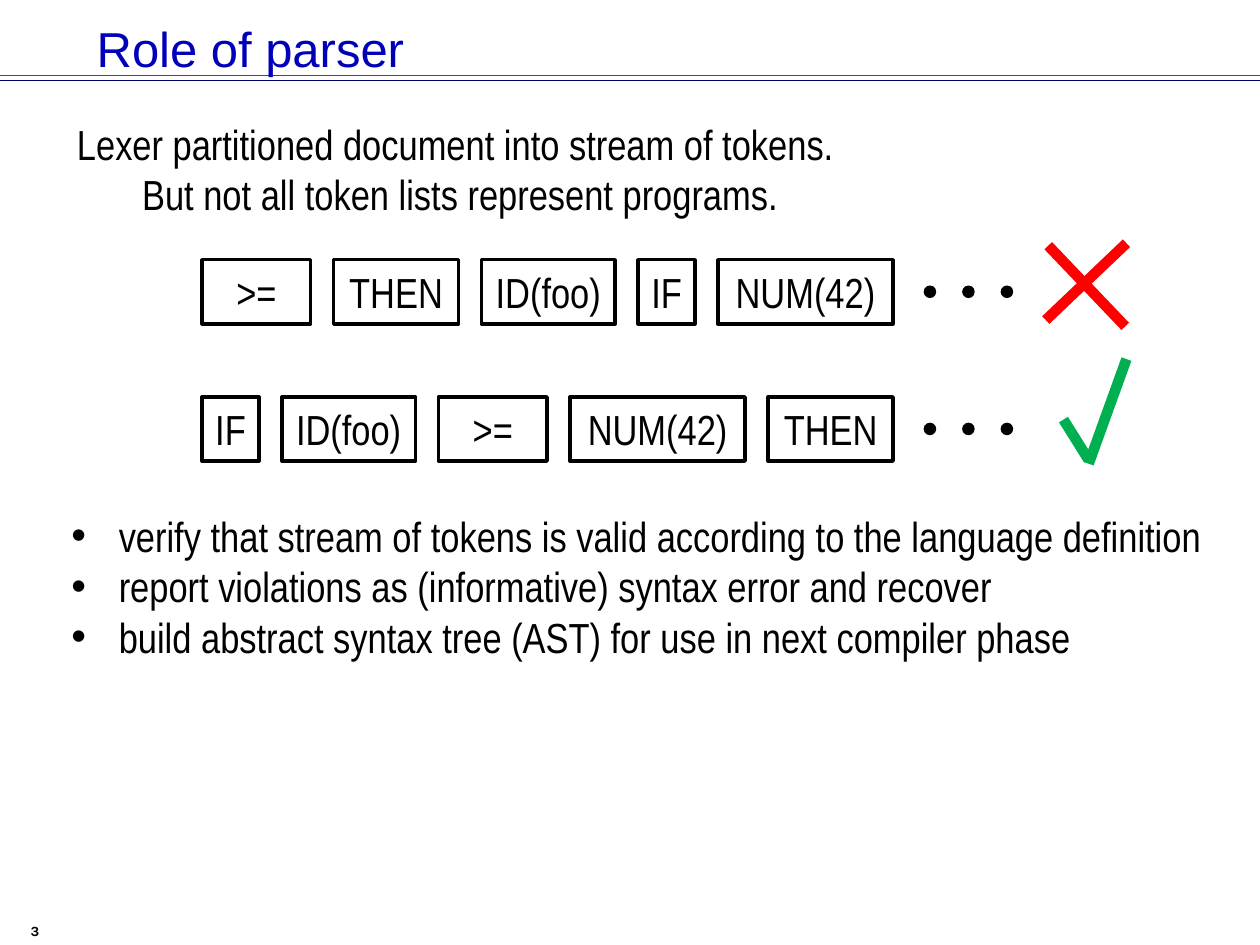
from lxml.etree import SubElement
from pptx import Presentation
from pptx.dml.color import RGBColor
from pptx.enum.shapes import MSO_CONNECTOR as Connector, MSO_SHAPE as Shape
from pptx.enum.text import MSO_ANCHOR as Anchor, PP_ALIGN as Align
from pptx.oxml.ns import qn
from pptx.util import Pt

BLACK = RGBColor(0x00, 0x00, 0x00)
RED = RGBColor(0xFF, 0x00, 0x00)
GREEN = RGBColor(0x00, 0xB0, 0x50)
NAVY = RGBColor(0x00, 0x00, 0x66)
TITLE_BLUE = RGBColor(0x00, 0x00, 0xBA)

BODY_FONT = "Arial Narrow"
BODY_SIZE = 24
ROW_LEFT = 115.5
TOKEN_GAP = 13.2
TOKEN_HEIGHT = 36.7
TOKEN_WIDTHS = {">=": 62, "THEN": 71.3, "ID(foo)": 76.3, "IF": 32.4, "NUM(42)": 100}
DOT_LEFT = 527.8
DOT_STEP = 22
DOT_SIZE = 7.2

TOKEN_ROWS = [
    (148.4, [">=", "THEN", "ID(foo)", "IF", "NUM(42)"]),
    (226.8, ["IF", "ID(foo)", ">=", "NUM(42)", "THEN"]),
]
PARSER_TASKS = [
    "verify that stream of tokens is valid according to the language definition",
    "report violations as (informative) syntax error and recover",
    "build abstract syntax tree (AST) for use in next compiler phase",
]


def add_span(para, text, size=BODY_SIZE, font=BODY_FONT, color=BLACK, bold=False):
    span = para.add_run()
    span.text = text
    span.font.size = Pt(size)
    span.font.name = font
    span.font.color.rgb = color
    span.font.bold = bold


def add_text_box(page, left, top, width, height, wrap=True):
    box = page.shapes.add_textbox(Pt(left), Pt(top), Pt(width), Pt(height))
    box.text_frame.word_wrap = wrap
    return box.text_frame


def add_stroke(page, start, end, color, width):
    points = [Pt(value) for value in (*start, *end)]
    stroke = page.shapes.add_connector(Connector.STRAIGHT, *points)
    stroke.line.color.rgb = color
    stroke.line.width = Pt(width)
    SubElement(stroke._element.spPr, qn("a:effectLst"))


def add_plain_shape(page, kind, left, top, width, height):
    shape = page.shapes.add_shape(kind, Pt(left), Pt(top), Pt(width), Pt(height))
    shape.shadow.inherit = False
    return shape


def add_token(page, text, left, top):
    token = add_plain_shape(page, Shape.RECTANGLE, left, top, TOKEN_WIDTHS[text], TOKEN_HEIGHT)
    token.fill.background()
    token.line.color.rgb = BLACK
    token.line.width = Pt(2)
    token.text_frame.word_wrap = False
    token.text_frame.vertical_anchor = Anchor.MIDDLE
    para = token.text_frame.paragraphs[0]
    para.alignment = Align.CENTER
    add_span(para, text)


def add_dots(page, top):
    for index in range(3):
        left = DOT_LEFT + index * DOT_STEP
        dot = add_plain_shape(page, Shape.OVAL, left, top, DOT_SIZE, DOT_SIZE)
        dot.fill.solid()
        dot.fill.fore_color.rgb = BLACK
        dot.line.fill.background()


def add_token_row(page, top, tokens):
    left = ROW_LEFT
    for text in tokens:
        add_token(page, text, left, top)
        left += TOKEN_WIDTHS[text] + TOKEN_GAP
    add_dots(page, top + (TOKEN_HEIGHT - DOT_SIZE) / 2)


def add_bullets(frame, lines):
    for index, line in enumerate(lines):
        para = frame.add_paragraph() if index else frame.paragraphs[0]
        properties = para._p.get_or_add_pPr()
        properties.set("marL", str(Pt(27)))
        properties.set("indent", str(Pt(-27)))
        SubElement(properties, qn("a:buFont"), typeface="Arial")
        SubElement(properties, qn("a:buChar"), char="•")
        add_span(para, line)


def add_header(page):
    add_stroke(page, (0, 43.2), (720, 43.2), RED, 1)
    add_stroke(page, (0, 46), (720, 46), NAVY, 1)
    title = add_text_box(page, 48.2, 7.2, 623, 72)
    add_span(title.paragraphs[0], "Role of parser", 28, "Arial", TITLE_BLUE)


def add_page_number(page):
    frame = add_text_box(page, 0, 523.4, 29.5, 16.6)
    frame.paragraphs[0].alignment = Align.RIGHT
    add_span(frame.paragraphs[0], "3", 8, "Karla", bold=True)


def add_introduction(page):
    para = add_text_box(page, 33.8, 64, 458, 65.5, wrap=False).paragraphs[0]
    para.alignment = Align.CENTER
    add_span(para, "Lexer partitioned document into stream of tokens. ")
    para.add_line_break()
    add_span(para, "But not all token lists represent programs.")


def add_verdicts(page):
    add_stroke(page, (599, 140.4), (643, 186.5), RED, 6)
    add_stroke(page, (643.7, 139), (597.6, 182.9), RED, 6)
    add_stroke(page, (607.7, 239.8), (622.1, 262.8), GREEN, 6)
    add_stroke(page, (622.1, 265), (643.7, 205.2), GREEN, 6)


def main():
    deck = Presentation()
    deck.slide_width = Pt(720)
    deck.slide_height = Pt(540)
    page = deck.slides.add_slide(deck.slide_layouts[6])
    add_header(page)
    add_page_number(page)
    add_introduction(page)
    for top, tokens in TOKEN_ROWS:
        add_token_row(page, top, tokens)
    add_verdicts(page)
    add_bullets(add_text_box(page, 33.8, 288, 664.6, 94.3), PARSER_TASKS)
    deck.save("out.pptx")


if __name__ == "__main__":
    main()
